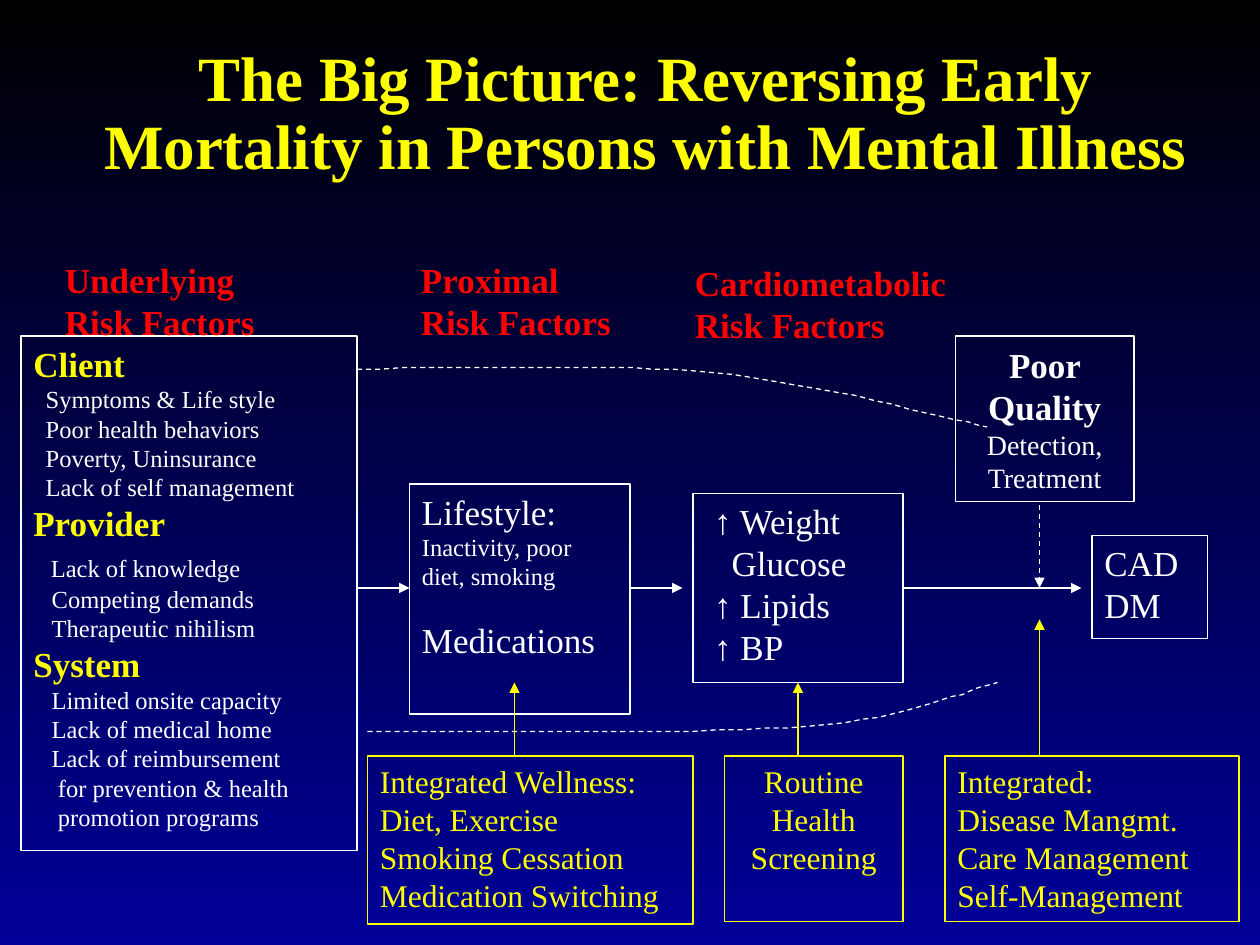
from pptx import Presentation
from pptx import util as u
from pptx.dml.color import RGBColor
from pptx.enum import dml, shapes, text
from pptx.oxml.ns import qn
from lxml import etree

COLORS = {"white": "FFFFFF", "yellow": "FFFF00", "red": "FF0000",
          "top": "000000", "bottom": "000099"}
FONT = "Times New Roman"
# text style: size, colour, bold
STYLES = {"title": (36, "yellow", True), "column": (20, "red", True),
          "group": (20, "yellow", True), "item": (14, "white", False),
          "factor": (20, "white", False), "strong": (20, "white", True),
          "detail": (16, "white", False), "action": (18, "yellow", False)}
LEFT, CENTER = text.PP_ALIGN.LEFT, text.PP_ALIGN.CENTER
TOP, MIDDLE = text.MSO_ANCHOR.TOP, text.MSO_ANCHOR.MIDDLE
BOTTOM_SITE, RIGHT_SITE = 2, 3


def rgb(name):
    return RGBColor.from_string(COLORS[name])


def para(style, words, indent=0, before=0, after=0):
    """One paragraph; words is a string, or a list of (style, string) runs."""
    runs = [(style, words)] if isinstance(words, str) else words
    return runs, indent, before, after


def paras(style, *lines, indent=0):
    return [para(style, line, indent) for line in lines]


def bezier(start, segments, steps=16):
    """Points along a chain of cubic curves, without the start."""
    points = []
    for c1, c2, end in segments:
        for i in range(1, steps + 1):
            t = i / steps
            weights = ((1 - t) ** 3, 3 * t * (1 - t) ** 2, 3 * t * t * (1 - t), t ** 3)
            points.append(tuple(
                sum(w * q[axis] for w, q in zip(weights, (start, c1, c2, end)))
                for axis in (0, 1)))
        start = end
    return points


class Deck:
    def __init__(self, prs):
        self.s = prs.slides.add_slide(prs.slide_layouts[6])

    def background(self):
        fill = self.s.background.fill
        fill.gradient()
        fill.gradient_angle = 270
        for stop, name in zip(fill.gradient_stops, ("top", "bottom")):
            stop.color.rgb = rgb(name)

    def set_text(self, sp, content, align=LEFT, anchor=TOP, spacing=None, wrap=True):
        tf = sp.text_frame
        tf.word_wrap = wrap
        tf.vertical_anchor = anchor
        for i, (runs, indent, before, after) in enumerate(content):
            p = tf.add_paragraph() if i else tf.paragraphs[0]
            p.alignment = align
            p.space_before, p.space_after = u.Pt(before), u.Pt(after)
            if spacing:
                p.line_spacing = spacing
            if indent:
                p._p.get_or_add_pPr().set("marL", str(u.Pt(indent)))
            for style, words in runs:
                r = p.add_run()
                r.text = words
                size, color, r.font.bold = STYLES[style]
                r.font.size, r.font.name = u.Pt(size), FONT
                r.font.color.rgb = rgb(color)

    def label(self, x, y, w, h, content, **layout):
        self.set_text(self.s.shapes.add_textbox(*map(u.Pt, (x, y, w, h))), content, **layout)

    def box(self, x, y, w, h, content, color="white", **layout):
        sp = self.s.shapes.add_shape(shapes.MSO_SHAPE.RECTANGLE, *map(u.Pt, (x, y, w, h)))
        sp.shadow.inherit = False
        sp.fill.background()
        self.stroke(sp, color)
        self.set_text(sp, content, **layout)
        return sp

    def stroke(self, sp, color, dashed=False):
        sp.line.color.rgb = rgb(color)
        sp.line.width = u.Pt(0.75)
        if dashed:
            sp.line.dash_style = dml.MSO_LINE.DASH

    def arrow(self, x1, y1, x2, y2, color="white", dashed=False, begin=None, end=None):
        """Arrow; begin and end are optional (shape, site) joints."""
        c = self.s.shapes.add_connector(shapes.MSO_CONNECTOR.STRAIGHT,
                                        *map(u.Pt, (x1, y1, x2, y2)))
        self.stroke(c, color, dashed)
        if begin:
            c.begin_connect(*begin)
        if end:
            c.end_connect(*end)
        etree.SubElement(c.line._get_or_add_ln(), qn("a:tailEnd"), type="triangle")
        etree.SubElement(c._element.spPr, qn("a:effectLst"))

    def curve(self, start, *segments):
        fb = self.s.shapes.build_freeform(*start, scale=u.Pt(1))
        fb.add_line_segments(bezier(start, segments), close=False)
        sp = fb.convert_to_shape()
        sp.shadow.inherit = False
        sp.fill.background()
        self.stroke(sp, "white", dashed=True)


def main():
    prs = Presentation()
    prs.slide_width, prs.slide_height = u.Pt(720), u.Pt(540)
    d = Deck(prs)
    d.background()

    cardio = d.box(396, 282, 120, 108, [
        para("factor", "↑ Weight", 5), para("factor", "Glucose", 15),
        para("factor", "↑ Lipids", 5), para("factor", "↑ BP", 5)])
    d.box(12, 192, 192, 294, [
        para("group", "Client"),
        *paras("item", "Symptoms & Life style", "Poor health behaviors",
               "Poverty, Uninsurance", "Lack of self management", indent=7),
        para("group", "Provider"),
        para("item", "Lack of knowledge", 10, before=5, after=1),
        *paras("item", "Competing demands", "Therapeutic nihilism", indent=10.5),
        para("group", "System"),
        *paras("item", "Limited onsite capacity", "Lack of medical home",
               "Lack of reimbursement", indent=10.5),
        *paras("item", "for prevention & health", "promotion programs", indent=14)])
    d.box(234, 276.5, 126, 131.5, [
        para("factor", [("factor", "Lifestyle:"),
                        ("item", " Inactivity, poor diet, smoking")]),
        para("factor", "Medications", before=16)])
    d.box(624, 306, 66, 59, paras("factor", "CAD", "DM"))

    d.label(36, 24, 666, 84,
            paras("title", "The Big Picture: Reversing Early Mortality "
                  "in Persons with Mental Illness"),
            align=CENTER, anchor=MIDDLE, spacing=0.9)
    d.box(546, 192, 102, 94.5,
          [para("strong", [("strong", "Poor Quality"), ("detail", " Detection, Treatment")])],
          align=CENTER, anchor=MIDDLE)

    for x, y, w, name, wrap in ((30, 144, 126, "Underlying", True),
                                (233.5, 144, 124, "Proximal", False),
                                (390, 146, 159, "Cardiometabolic", False)):
        d.label(x, y, w, 55.5, paras("column", name, "Risk Factors"), wrap=wrap)

    d.curve((210, 417.5), ((306, 418.5), (402, 419.5), (462, 415)),
            ((522, 410.5), (553, 394), (570, 390)))
    d.curve((204, 211), ((276, 209.5), (348, 208), (408, 213)),
            ((468, 219), (540, 239), (564, 244)))

    d.box(210, 432, 186, 96,
          paras("action", "Integrated Wellness:", "Diet, Exercise",
                "Smoking Cessation", "Medication Switching"), "yellow")
    d.box(414, 432, 102, 94.5,
          paras("action", "Routine Health Screening"), "yellow", align=CENTER)
    d.box(540, 432, 168, 94.5,
          paras("action", "Integrated:", "Disease Mangmt.",
                "Care Management", "Self-Management"), "yellow")

    d.arrow(204, 336, 234, 336)
    d.arrow(360, 336, 390, 336)
    d.arrow(516, 336, 618, 336, begin=(cardio, RIGHT_SITE))
    d.arrow(594, 288.5, 594, 336, dashed=True)
    d.arrow(294, 432, 294, 390, "yellow")
    d.arrow(456, 432, 456, 390, "yellow", end=(cardio, BOTTOM_SITE))
    d.arrow(594, 432, 594, 354, "yellow")

    prs.save("out.pptx")


if __name__ == "__main__":
    main()
